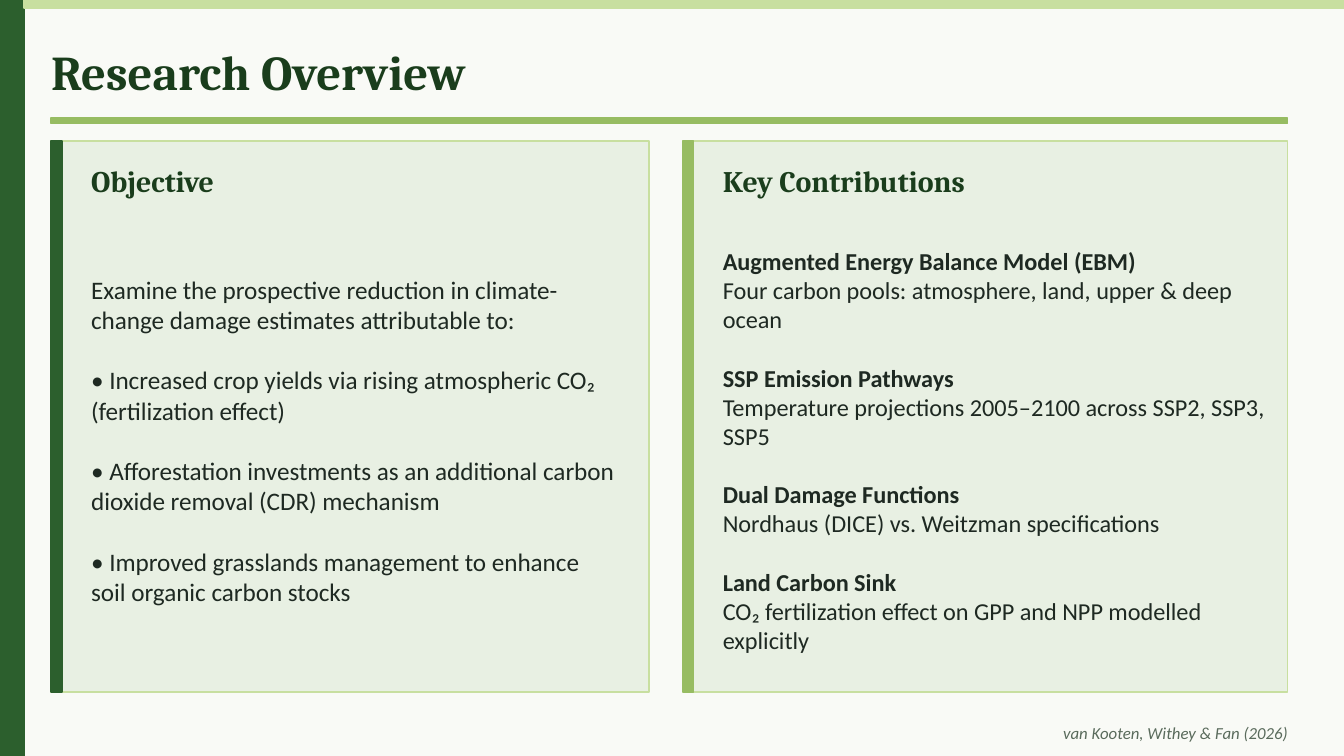
from dataclasses import dataclass

from pptx import Presentation
from pptx.dml.color import RGBColor
from pptx.enum.shapes import MSO_SHAPE as Shape
from pptx.enum.text import MSO_ANCHOR as Anchor, PP_ALIGN as Align
from pptx.slide import Slide
from pptx.text.text import TextFrame
from pptx.util import Pt

EMU_PER_PX = 4572
SLIDE_WIDTH, SLIDE_HEIGHT = 2000, 1125
SIDEBAR_WIDTH = 36
MARGIN, CONTENT_WIDTH = 76, 1840
CARD_TOP, CARD_HEIGHT = 210, 820
ACCENT_WIDTH = 16
LINE_SPACING = 1.2

COLORS = {
    "background": "F9FAF6",
    "forest": "2C5F2D",
    "leaf": "97BC62",
    "pale": "C8DFA0",
    "card": "E8F0E3",
    "heading": "1A3D1C",
    "body": "1E2922",
    "footer": "5A6B5C",
}


@dataclass(frozen=True)
class Box:
    left: int
    top: int
    width: int
    height: int

    def emu(self) -> tuple[int, ...]:
        return tuple(
            px * EMU_PER_PX for px in (self.left, self.top, self.width, self.height)
        )


@dataclass(frozen=True)
class TextStyle:
    font: str
    size: float
    color: str
    bold: bool = False
    italic: bool = False
    align: Align = Align.LEFT


@dataclass(frozen=True)
class Line:
    text: str
    bold: bool = False
    gap: bool = False


@dataclass(frozen=True)
class Card:
    title: str
    left: int
    width: int
    accent: str
    body_width: int
    body_height: int
    body_size: float
    lines: list[Line]


TITLE = TextStyle("Cambria", 26, "heading", bold=True)
CARD_TITLE = TextStyle("Cambria", 16, "heading", bold=True)
FOOTER = TextStyle("Calibri", 9, "footer", italic=True, align=Align.RIGHT)

OBJECTIVE = [
    Line("Examine the prospective reduction in climate-change damage estimates attributable to:"),
    Line("• Increased crop yields via rising atmospheric CO₂ (fertilization effect)", gap=True),
    Line("• Afforestation investments as an additional carbon dioxide removal (CDR) mechanism", gap=True),
    Line("• Improved grasslands management to enhance soil organic carbon stocks", gap=True),
]

CONTRIBUTIONS = [
    Line("Augmented Energy Balance Model (EBM)", bold=True),
    Line("Four carbon pools: atmosphere, land, upper & deep ocean"),
    Line("SSP Emission Pathways", bold=True, gap=True),
    Line("Temperature projections 2005–2100 across SSP2, SSP3, SSP5"),
    Line("Dual Damage Functions", bold=True, gap=True),
    Line("Nordhaus (DICE) vs. Weitzman specifications"),
    Line("Land Carbon Sink", bold=True, gap=True),
    Line("CO₂ fertilization effect on GPP and NPP modelled explicitly"),
]

CARDS = [
    Card("Objective", 76, 890, "forest", 820, 690, 13.5, OBJECTIVE),
    Card("Key Contributions", 1016, 900, "leaf", 846, 720, 13, CONTRIBUTIONS),
]


def rgb(name: str) -> RGBColor:
    return RGBColor.from_string(COLORS[name])


def add_bar(slide: Slide, box: Box, fill: str, line: str = "") -> None:
    shape = slide.shapes.add_shape(Shape.RECTANGLE, *box.emu())
    shape.shadow.inherit = False
    shape.fill.solid()
    shape.fill.fore_color.rgb = rgb(fill)
    shape.line.color.rgb = rgb(line or fill)
    shape.line.width = Pt(1)


def add_text(slide: Slide, box: Box, lines: list[Line], style: TextStyle) -> TextFrame:
    text_frame = slide.shapes.add_textbox(*box.emu()).text_frame
    text_frame.word_wrap = True
    text_frame.vertical_anchor = Anchor.MIDDLE
    text_frame.text = "\n".join(line.text for line in lines)
    for paragraph, line in zip(text_frame.paragraphs, lines):
        paragraph.alignment = style.align
        if line.gap:
            paragraph.space_before = Pt(style.size * LINE_SPACING)
        for run in paragraph.runs:
            run.font.name = style.font
            run.font.size = Pt(style.size)
            run.font.bold = style.bold or line.bold
            run.font.italic = style.italic
            run.font.color.rgb = rgb(style.color)
    return text_frame


def add_card(slide: Slide, card: Card) -> None:
    add_bar(slide, Box(card.left, CARD_TOP, card.width, CARD_HEIGHT), "card", "pale")
    add_bar(slide, Box(card.left, CARD_TOP, ACCENT_WIDTH, CARD_HEIGHT), card.accent)
    text_left = card.left + 40
    add_text(slide, Box(text_left, CARD_TOP + 20, 820, 76), [Line(card.title)], CARD_TITLE)
    body = Box(text_left, CARD_TOP + 100, card.body_width, card.body_height)
    add_text(slide, body, card.lines, TextStyle("Calibri", card.body_size, "body"))


def main() -> None:
    presentation = Presentation()
    presentation.slide_width = SLIDE_WIDTH * EMU_PER_PX
    presentation.slide_height = SLIDE_HEIGHT * EMU_PER_PX
    slide = presentation.slides.add_slide(presentation.slide_layouts[6])
    slide.background.fill.solid()
    slide.background.fill.fore_color.rgb = rgb("background")

    add_bar(slide, Box(0, 0, SIDEBAR_WIDTH, SLIDE_HEIGHT), "forest")
    add_bar(slide, Box(SIDEBAR_WIDTH, 0, SLIDE_WIDTH - SIDEBAR_WIDTH, 12), "pale")
    title = add_text(slide, Box(MARGIN, 36, CONTENT_WIDTH, 140), [Line("Research Overview")], TITLE)
    title.margin_left = title.margin_right = title.margin_top = title.margin_bottom = 0
    add_bar(slide, Box(MARGIN, 176, CONTENT_WIDTH, 8), "leaf")

    for card in CARDS:
        add_card(slide, card)

    add_text(slide, Box(MARGIN, 1070, 1860, 40), [Line("van Kooten, Withey & Fan (2026)")], FOOTER)
    presentation.save("out.pptx")


if __name__ == "__main__":
    main()
